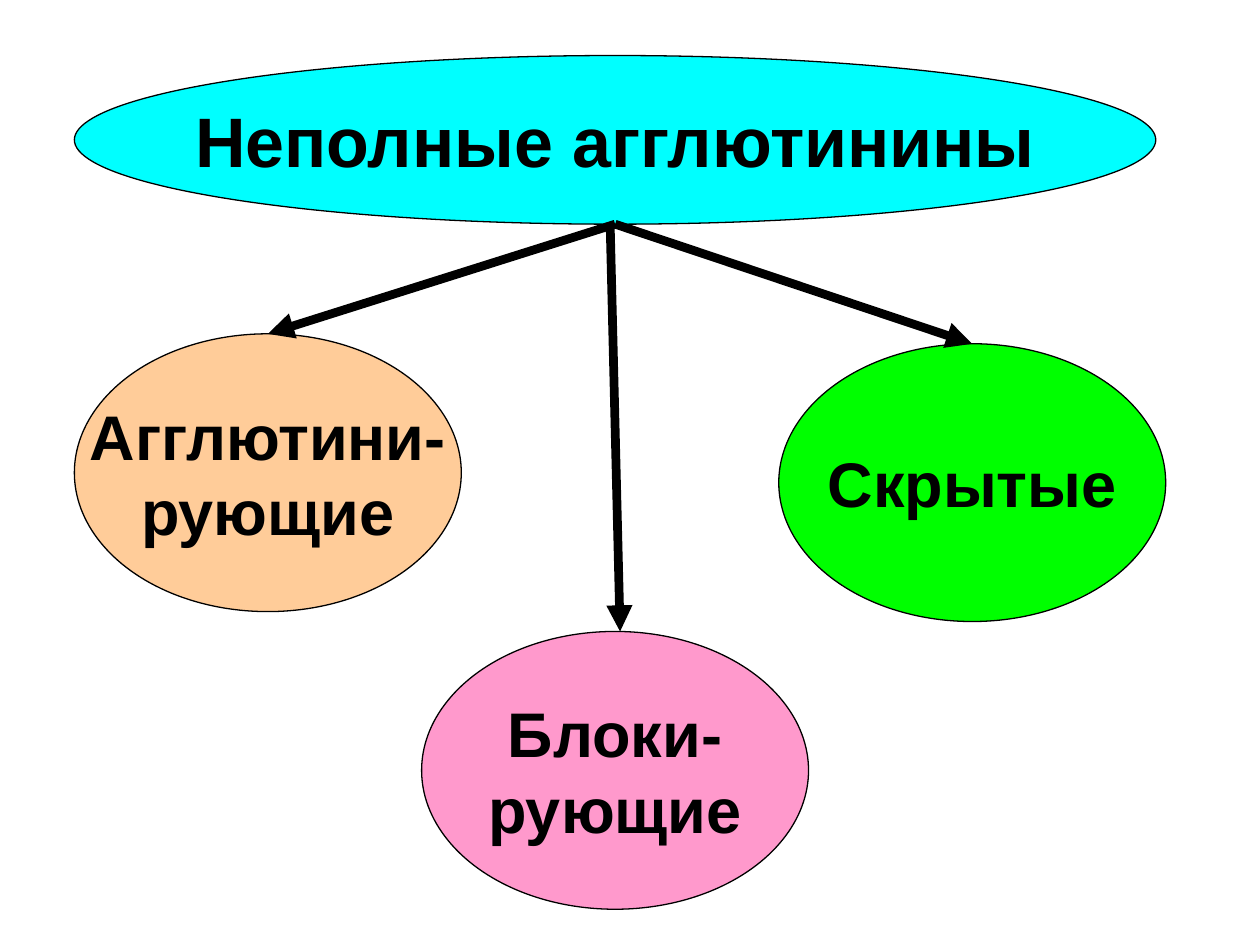
from lxml import etree
from pptx import Presentation
from pptx.dml.color import RGBColor
from pptx.enum.shapes import MSO_CONNECTOR, MSO_SHAPE
from pptx.enum.text import MSO_ANCHOR, PP_ALIGN
from pptx.oxml.ns import qn
from pptx.util import Cm, Pt

OVAL = MSO_SHAPE.OVAL
STRAIGHT = MSO_CONNECTOR.STRAIGHT
MIDDLE = MSO_ANCHOR.MIDDLE
CENTER = PP_ALIGN.CENTER

BLANK_LAYOUT = 6
BLACK = "000000"
TOPIC_LEFT, TOPIC_TOP, TOPIC_WIDTH, TOPIC_HEIGHT = 1.5, 1.12, 21.8, 3.4
KIND_WIDTH, KIND_HEIGHT = 7.8, 5.6

# lines of the label, left, top, fill, lean of the arrow (all lengths in cm)
KINDS = [
    (["Агглютини-", "рующие"], 1.5, 6.73, "FFCC99", 0),
    (["Блоки-", "рующие"], 8.5, 12.73, "FF99CC", 0.1),
    (["Скрытые"], 15.7, 6.93, "00FF00", 0),
]


def rgb(hex_code):
    return RGBColor.from_string(hex_code)


def set_line(line, width):
    line.color.rgb = rgb(BLACK)
    line.width = Pt(width)


def write_label(frame, lines, size):
    """Put each line in its own centred bold paragraph."""
    frame.word_wrap = False
    frame.vertical_anchor = MIDDLE
    font_format = {"name": "Arial", "size": Pt(size), "bold": True}
    for index, text in enumerate(lines):
        paragraph = frame.add_paragraph() if index else frame.paragraphs[0]
        paragraph.alignment = CENTER
        run = paragraph.add_run()
        run.text = text
        for attribute, value in font_format.items():
            setattr(run.font, attribute, value)
        run.font.color.rgb = rgb(BLACK)


def add_oval(slide, lines, box, fill, size):
    oval = slide.shapes.add_shape(OVAL, *map(Cm, box))
    oval.shadow.inherit = False
    oval.fill.solid()
    oval.fill.fore_color.rgb = rgb(fill)
    set_line(oval.line, 0.75)
    write_label(oval.text_frame, lines, size)


def add_arrow(slide, start, end):
    arrow = slide.shapes.add_connector(STRAIGHT, *map(Cm, start + end))
    set_line(arrow.line, 5)
    line_xml = arrow.line._get_or_add_ln()
    etree.SubElement(line_xml, qn("a:tailEnd"), type="triangle")
    etree.SubElement(arrow._element.spPr, qn("a:effectLst"))


def main():
    deck = Presentation()
    deck.slide_width, deck.slide_height = Cm(25.4), Cm(19.05)
    slide = deck.slides.add_slide(deck.slide_layouts[BLANK_LAYOUT])

    topic_box = (TOPIC_LEFT, TOPIC_TOP, TOPIC_WIDTH, TOPIC_HEIGHT)
    add_oval(slide, ["Неполные агглютинины"], topic_box, "00FFFF", 40)
    for lines, left, top, fill, _ in KINDS:
        add_oval(slide, lines, (left, top, KIND_WIDTH, KIND_HEIGHT), fill, 36)

    topic_center = TOPIC_LEFT + TOPIC_WIDTH / 2
    topic_bottom = TOPIC_TOP + TOPIC_HEIGHT
    for _, left, top, _, lean in KINDS:
        kind_center = left + KIND_WIDTH / 2
        add_arrow(slide, (topic_center - lean, topic_bottom),
                  (kind_center + lean, top))

    deck.save("out.pptx")


if __name__ == "__main__":
    main()
